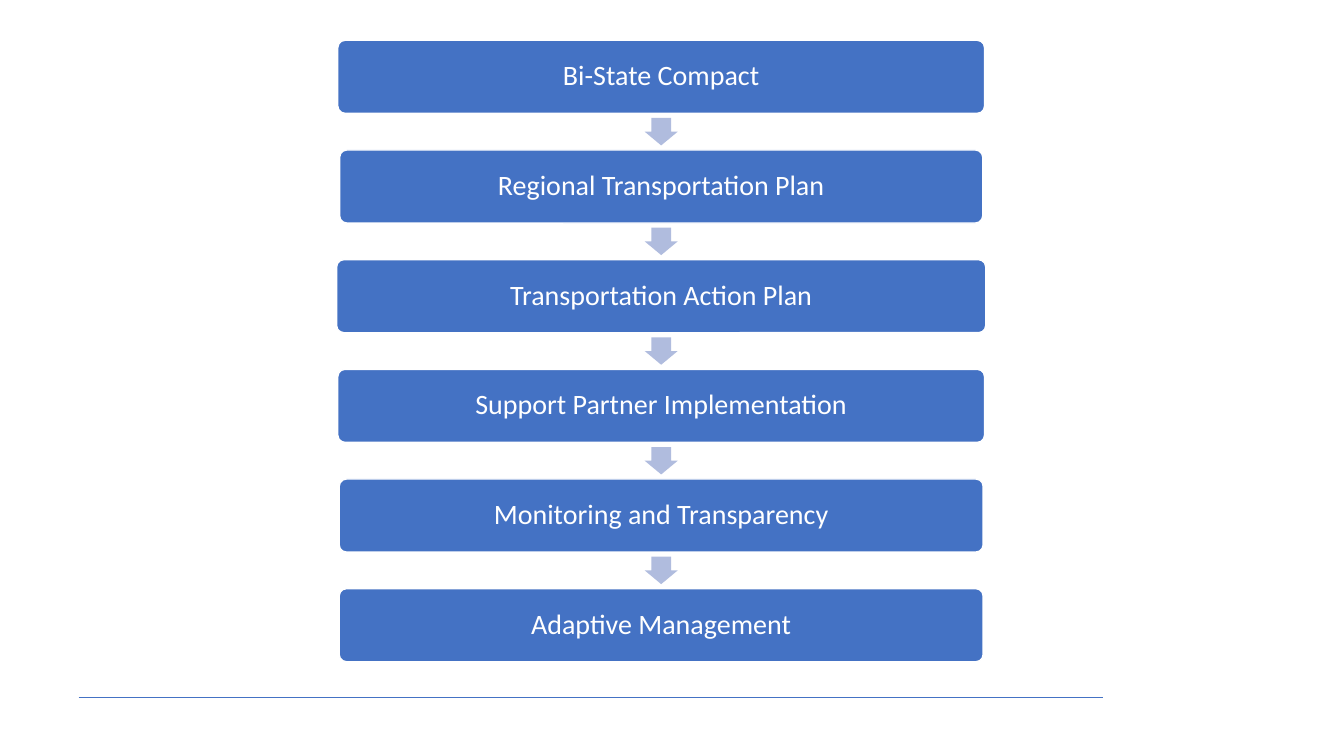
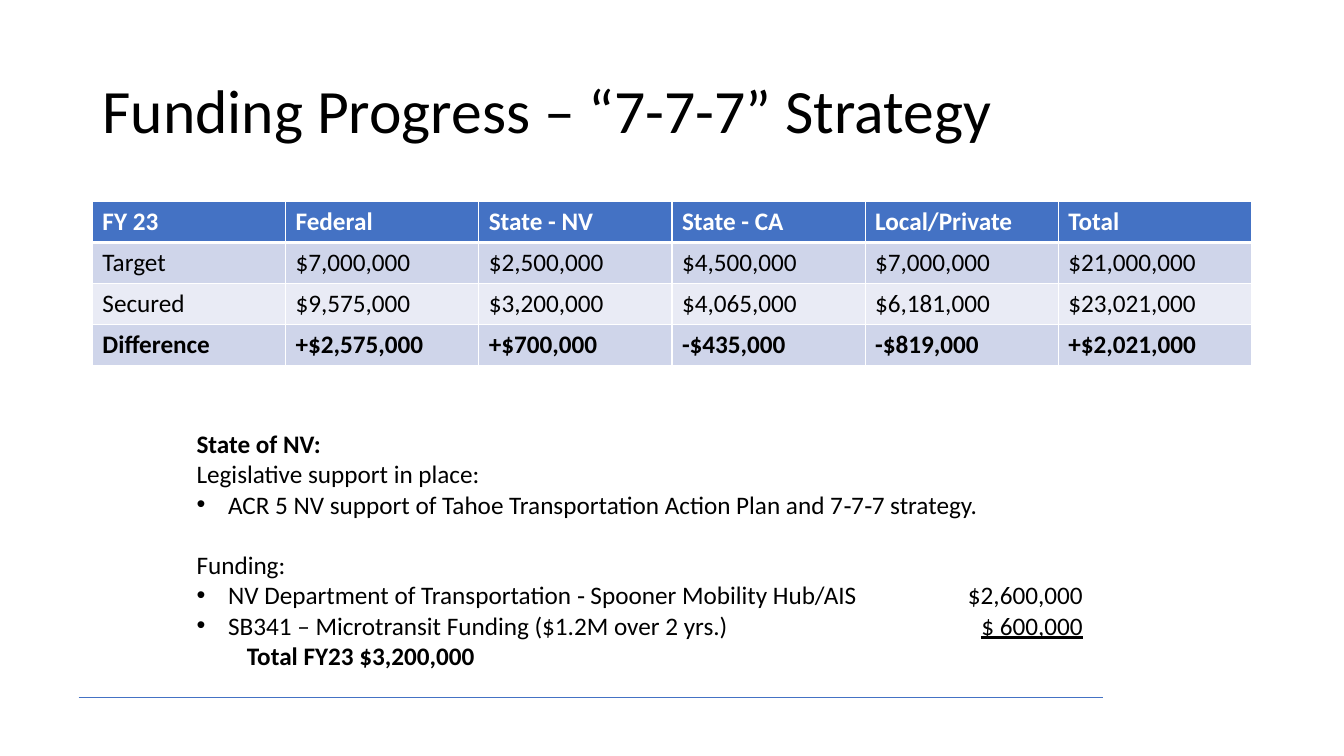
from lxml.etree import SubElement
from pptx import Presentation
from pptx.dml.color import RGBColor
from pptx.enum.shapes import MSO_CONNECTOR, MSO_SHAPE
from pptx.enum.text import MSO_ANCHOR, MSO_AUTO_SIZE, PP_ALIGN
from pptx.oxml.ns import qn
from pptx.util import Pt

BLUE, PALE, WHITE, BLACK = "4472C4", "B0BCDE", "FFFFFF", "000000"
BANDS = ("CFD5EA", "E9EBF5")
FONT = "Calibri"

STEPS = [
    ("Bi-State Compact", 462),
    ("Regional Transportation Plan", 459.4),
    ("Transportation Action Plan", 463.7),
    ("Support Partner Implementation", 462),
    ("Monitoring and Transparency", 460),
    ("Adaptive Management", 460),
]

FUNDS = [
    ["FY 23", "Federal", "State - NV", "State - CA", "Local/Private", "Total"],
    ["Target", "$7,000,000", "$2,500,000", "$4,500,000", "$7,000,000", "$21,000,000"],
    ["Secured", "$9,575,000", "$3,200,000", "$4,065,000", "$6,181,000", "$23,021,000"],
    ["Difference", "+$2,575,000", "+$700,000", "-$435,000", "-$819,000", "+$2,021,000"],
]

SUM, RULE = 633, 540  # right edge of the amounts, left end of the sum rule
NOTES = [
    {"runs": [("State of NV:", {"bold": True})]},
    {"runs": [("Legislative support in place:", {})]},
    {"runs": [("ACR 5 NV support of Tahoe Transportation Action Plan and 7‐7‐7 strategy.", {})],
     "dot": True},
    {"runs": [("Funding:", {})], "gap": 21.6},
    {"runs": [("NV Department of Transportation ‐ Spooner Mobility Hub/AIS\t$2,600,000", {})],
     "dot": True, "tabs": [(SUM, "r")]},
    {"runs": [("SB341 – Microtransit Funding ($1.2M over 2 yrs.)\t", {}),
              ("\t$ 600,000", {"underline": True})],
     "dot": True, "tabs": [(RULE, "l"), (SUM, "r")]},
    {"runs": [("Total FY23 $3,200,000", {"bold": True})], "tabs": [(SUM - 2, "r")], "lead": "\t"},
]


def tint(code):
    return RGBColor.from_string(code)


def apply(item, values):
    for name, value in values.items():
        setattr(item, name, value)


def style(font, size, color, **more):
    apply(font, {"name": FONT, "size": Pt(size), **more})
    font.color.rgb = tint(color)


def place(shape, left, top, width, height):
    apply(shape, {"left": Pt(left), "top": Pt(top),
                  "width": Pt(width), "height": Pt(height)})


def add_rule(slide, left, top, width):
    line = slide.shapes.add_connector(
        MSO_CONNECTOR.STRAIGHT, Pt(left), Pt(top), Pt(left + width), Pt(top))
    line.line.color.rgb = tint(BLUE)
    line.line.width = Pt(0.5)
    SubElement(line._element.spPr, qn("a:effectLst"))


def add_page(deck, layout):
    """Add a slide with the shared foot rule."""
    slide = deck.slides.add_slide(deck.slide_layouts[layout])
    add_rule(slide, 56.2, 498.2, 731.5)
    return slide


def add_solid(slide, kind, box, fill):
    shape = slide.shapes.add_shape(kind, *map(Pt, box))
    shape.shadow.inherit = False
    shape.fill.solid()
    shape.fill.fore_color.rgb = tint(fill)
    shape.line.fill.background()
    return shape


def add_step(slide, box, label):
    shape = add_solid(slide, MSO_SHAPE.ROUNDED_RECTANGLE, box, BLUE)
    shape.adjustments[0] = 0.1
    shape.line.color.rgb = tint(WHITE)
    shape.line.width = Pt(1)
    frame = shape.text_frame
    apply(frame, {"word_wrap": True, "vertical_anchor": MSO_ANCHOR.MIDDLE})
    para = frame.paragraphs[0]
    apply(para, {"text": label, "alignment": PP_ALIGN.CENTER, "line_spacing": 0.9})
    style(para.font, 20, WHITE)


def add_flow(slide, mid, top, height):
    """Stack the steps around the line x = mid, an arrow in each gap."""
    tall, wide, drop = 52.2, 23.6, 19.6
    pitch = (height - tall) / (len(STEPS) - 1)
    for row, (label, width) in enumerate(STEPS):
        y = top + row * pitch
        add_step(slide, (mid - width / 2, y, width, tall), label)
        if row < len(STEPS) - 1:
            gap = (pitch - tall - drop) / 2
            box = (mid - wide / 2, y + tall + gap, wide, drop)
            arrow = add_solid(slide, MSO_SHAPE.DOWN_ARROW, box, PALE)
            arrow.adjustments[0] = 0.6
            arrow.adjustments[1] = 0.5


def set_title(slide, box, text):
    title = slide.shapes.title
    place(title, *box)
    frame = title.text_frame
    apply(frame, {"auto_size": MSO_AUTO_SIZE.NONE, "vertical_anchor": MSO_ANCHOR.MIDDLE})
    para = frame.paragraphs[0]
    apply(para, {"text": text, "alignment": PP_ALIGN.LEFT, "line_spacing": 0.9})
    style(para.font, 44, BLACK)


def set_edges(cell, widths):
    props = cell._tc.get_or_add_tcPr()
    for spot, (side, width) in enumerate(widths.items()):
        edge = props.makeelement(qn("a:ln" + side), {"w": str(Pt(width))})
        fill = SubElement(edge, qn("a:solidFill"))
        SubElement(fill, qn("a:srgbClr"), val=WHITE)
        props.insert(spot, edge)


def add_funds(slide, left, top, width, height):
    rows, cols = len(FUNDS), len(FUNDS[0])
    table = slide.shapes.add_table(
        rows, cols, Pt(left), Pt(top), Pt(width), Pt(height)).table
    for r, line in enumerate(FUNDS):
        head = r == 0
        for c, text in enumerate(line):
            cell = table.cell(r, c)
            cell.text = text
            cell.fill.solid()
            cell.fill.fore_color.rgb = tint(BLUE if head else BANDS[(r - 1) % 2])
            set_edges(cell, {"L": 1, "R": 1, "T": 3 if r == 1 else 1, "B": 3 if head else 1})
            style(cell.text_frame.paragraphs[0].font, 18,
                  WHITE if head else BLACK, bold=r in (0, rows - 1))


def set_marks(para, dot, tabs):
    """Set indent, bullet and tab stops of a paragraph."""
    props = para._p.get_or_add_pPr()
    hang = Pt(22.5) if dot else 0
    props.set("marL", str(hang))
    props.set("indent", str(-hang))
    if dot:
        SubElement(props, qn("a:buFont"), typeface="Arial")
        SubElement(props, qn("a:buChar"), char="•")
    else:
        SubElement(props, qn("a:buNone"))
    if tabs:
        stops = SubElement(props, qn("a:tabLst"))
        for pos, side in tabs:
            SubElement(stops, qn("a:tab"), pos=str(Pt(pos)), algn=side)


def set_notes(slide, box):
    body = slide.placeholders[1]
    place(body, *box)
    frame = body.text_frame
    apply(frame, {"auto_size": MSO_AUTO_SIZE.NONE, "word_wrap": True,
                  "vertical_anchor": MSO_ANCHOR.TOP})
    for row, note in enumerate(NOTES):
        para = frame.add_paragraph() if row else frame.paragraphs[0]
        set_marks(para, note.get("dot"), note.get("tabs"))
        apply(para, {"space_before": Pt(note.get("gap", 0)), "alignment": PP_ALIGN.LEFT})
        style(para.font, 18, BLACK)
        for text, look in note["runs"]:
            run = para.add_run()
            run.text = note.get("lead", "") + text
            style(run.font, 18, BLACK, **look)


def add_steps_page(deck):
    add_flow(add_page(deck, 6), 472.3, 28.8, 443.9)


def add_funds_page(deck):
    slide = add_page(deck, 1)
    set_title(slide, (66, 28.8, 828, 104.4), "Funding Progress – “7-7-7” Strategy")
    add_funds(slide, 66, 144, 828, 116.8)
    set_notes(slide, (133.2, 302.4, 692.6, 181.4))


def main():
    deck = Presentation()
    apply(deck, {"slide_width": Pt(960), "slide_height": Pt(540)})
    add_steps_page(deck)
    add_funds_page(deck)
    deck.save("out.pptx")


if __name__ == "__main__":
    main()
